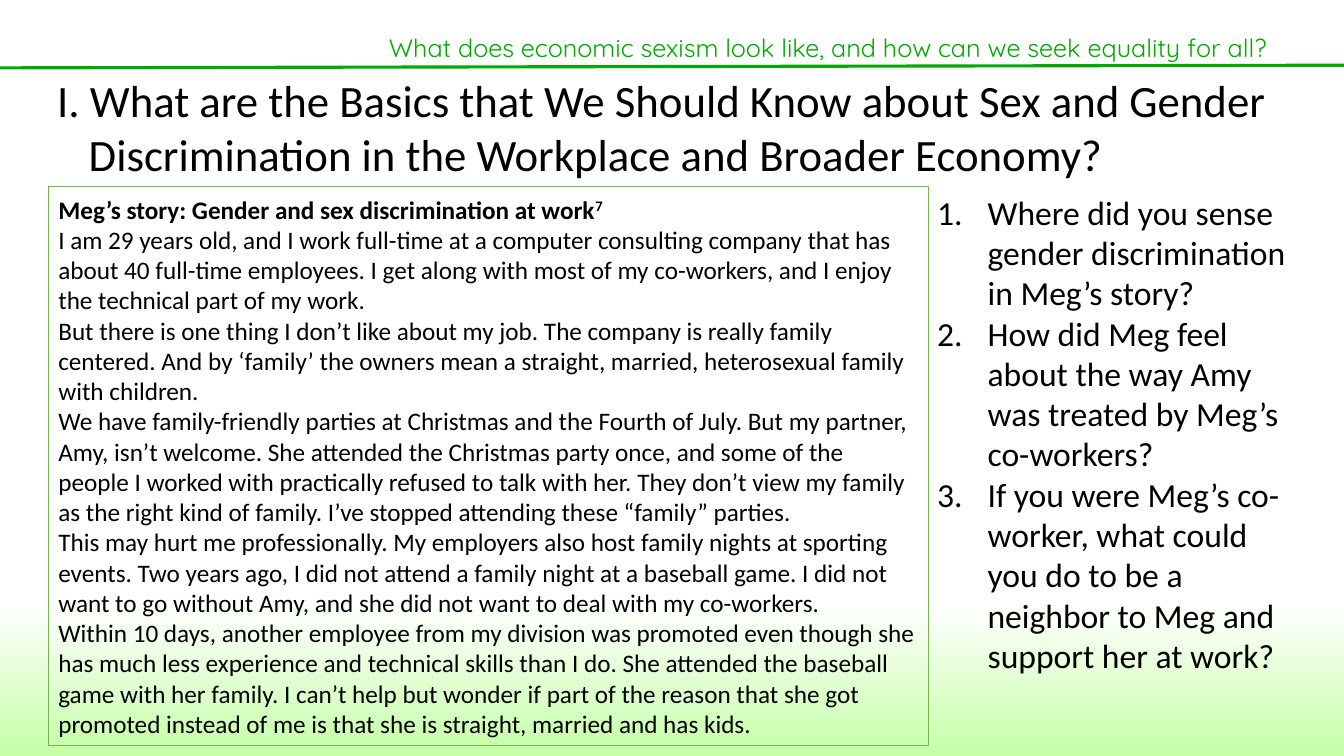
from lxml import etree
from pptx import Presentation
from pptx.dml.color import RGBColor
from pptx.enum import shapes, text
from pptx.oxml import ns
from pptx.util import Pt

GREEN = RGBColor(0x00, 0xAA, 0x00)
BORDER_GREEN = RGBColor(0x76, 0xB5, 0x4B)
PALE_GREEN = RGBColor(0xC4, 0xFF, 0xA7)
BLACK = RGBColor(0, 0, 0)
WHITE = RGBColor(255, 255, 255)

SLIDE_WIDTH, SLIDE_HEIGHT = 960, 540
HEADER = "What does economic sexism look like, and how can we seek equality for all?"
TITLE = ("I. What are the Basics that We Should Know about Sex and Gender "
         "Discrimination in the Workplace and Broader Economy?")
STORY_HEADING = "Meg’s story: Gender and sex discrimination at work"
STORY_NOTE = "7"
STORY = [
    "I am 29 years old, and I work full-time at a computer consulting company that has "
    "about 40 full-time employees. I get along with most of my co-workers, and I enjoy "
    "the technical part of my work.",
    "But there is one thing I don’t like about my job. The company is really family "
    "centered. And by ‘family’ the owners mean a straight, married, heterosexual family "
    "with children.",
    "We have family-friendly parties at Christmas and the Fourth of July. But my partner, "
    "Amy, isn’t welcome. She attended the Christmas party once, and some of the people I "
    "worked with practically refused to talk with her. They don’t view my family as the "
    "right kind of family. I’ve stopped attending these “family” parties.",
    "This may hurt me professionally. My employers also host family nights at sporting "
    "events. Two years ago, I did not attend a family night at a baseball game. I did not "
    "want to go without Amy, and she did not want to deal with my co-workers.",
    "Within 10 days, another employee from my division was promoted even though she has "
    "much less experience and technical skills than I do. She attended the baseball game "
    "with her family. I can’t help but wonder if part of the reason that she got promoted "
    "instead of me is that she is straight, married and has kids.",
]
QUESTIONS = [
    "Where did you sense gender discrimination in Meg’s story?",
    "How did Meg feel about the way Amy was treated by Meg’s co-workers?",
    "If you were Meg’s co-worker, what could you do to be a neighbor to Meg and "
    "support her at work?",
]

# left, top, width, height
HEADER_BOX = (270.7, 19.4, 689.3, 28.8)
TITLE_BOX = (33.8, 48.2, 891.4, 85)
STORY_BOX = (34.6, 133.2, 628.6, 399.6)
QUESTIONS_BOX = (662.4, 133.2, 263.5, 385.2)


def write(shape, lines, size, font="Calibri", color=BLACK, hanging=0, numbered=False):
    """Fill a shape with one left-aligned paragraph per line."""
    frame = shape.text_frame
    frame.word_wrap = True
    frame.text = "\n".join(lines)
    for paragraph in frame.paragraphs:
        paragraph.alignment = text.PP_ALIGN.LEFT
        properties = paragraph._p.get_or_add_pPr()
        if hanging:
            properties.set("marL", str(Pt(hanging)))
            properties.set("indent", str(-Pt(hanging)))
        if numbered:
            etree.SubElement(properties, ns.qn("a:buFont"), typeface="+mj-lt")
            etree.SubElement(properties, ns.qn("a:buAutoNum"), type="arabicPeriod")
        for run in paragraph.runs:
            style(run, size, font, color)


def style(run, size, font, color):
    run.font.size = Pt(size)
    run.font.name = font
    run.font.color.rgb = color


def add_text(slide, box, lines, size, **options):
    write(slide.shapes.add_textbox(*map(Pt, box)), lines, size, **options)


def add_background(slide):
    fill = slide.background.fill
    fill.gradient()
    fill.gradient_angle = 270
    for stop, position, color in zip(fill.gradient_stops, (0.8, 1), (WHITE, PALE_GREEN)):
        stop.position = position
        stop.color.rgb = color


def add_header_line(slide):
    line = slide.shapes.add_connector(
        shapes.MSO_CONNECTOR.STRAIGHT, 0, Pt(48.5), Pt(SLIDE_WIDTH), Pt(46.6))
    line.line.color.rgb = GREEN
    line.line.width = Pt(2.25)
    etree.SubElement(line._element.spPr, ns.qn("a:effectLst"))


def add_story(slide):
    story = slide.shapes.add_shape(shapes.MSO_SHAPE.RECTANGLE, *map(Pt, STORY_BOX))
    story.shadow.inherit = False
    story.fill.background()
    story.line.color.rgb = BORDER_GREEN
    story.line.width = Pt(0.75)
    story.text_frame.vertical_anchor = text.MSO_ANCHOR.MIDDLE
    write(story, [STORY_HEADING] + STORY, 18)
    heading = story.text_frame.paragraphs[0]
    note = heading.add_run()
    note.text = STORY_NOTE
    style(note, 18, "Calibri", BLACK)
    note.font._element.set("baseline", "30000")
    for run in heading.runs:
        run.font.bold = True


def main():
    presentation = Presentation()
    presentation.slide_width = Pt(SLIDE_WIDTH)
    presentation.slide_height = Pt(SLIDE_HEIGHT)
    slide = presentation.slides.add_slide(presentation.slide_layouts[6])
    add_background(slide)
    add_header_line(slide)
    add_text(slide, HEADER_BOX, [HEADER], 18, font="Quicksand", color=GREEN)
    add_story(slide)
    add_text(slide, QUESTIONS_BOX, QUESTIONS, 24, hanging=36, numbered=True)
    add_text(slide, TITLE_BOX, [TITLE], 32, hanging=22.5)
    presentation.save("out.pptx")


if __name__ == "__main__":
    main()
